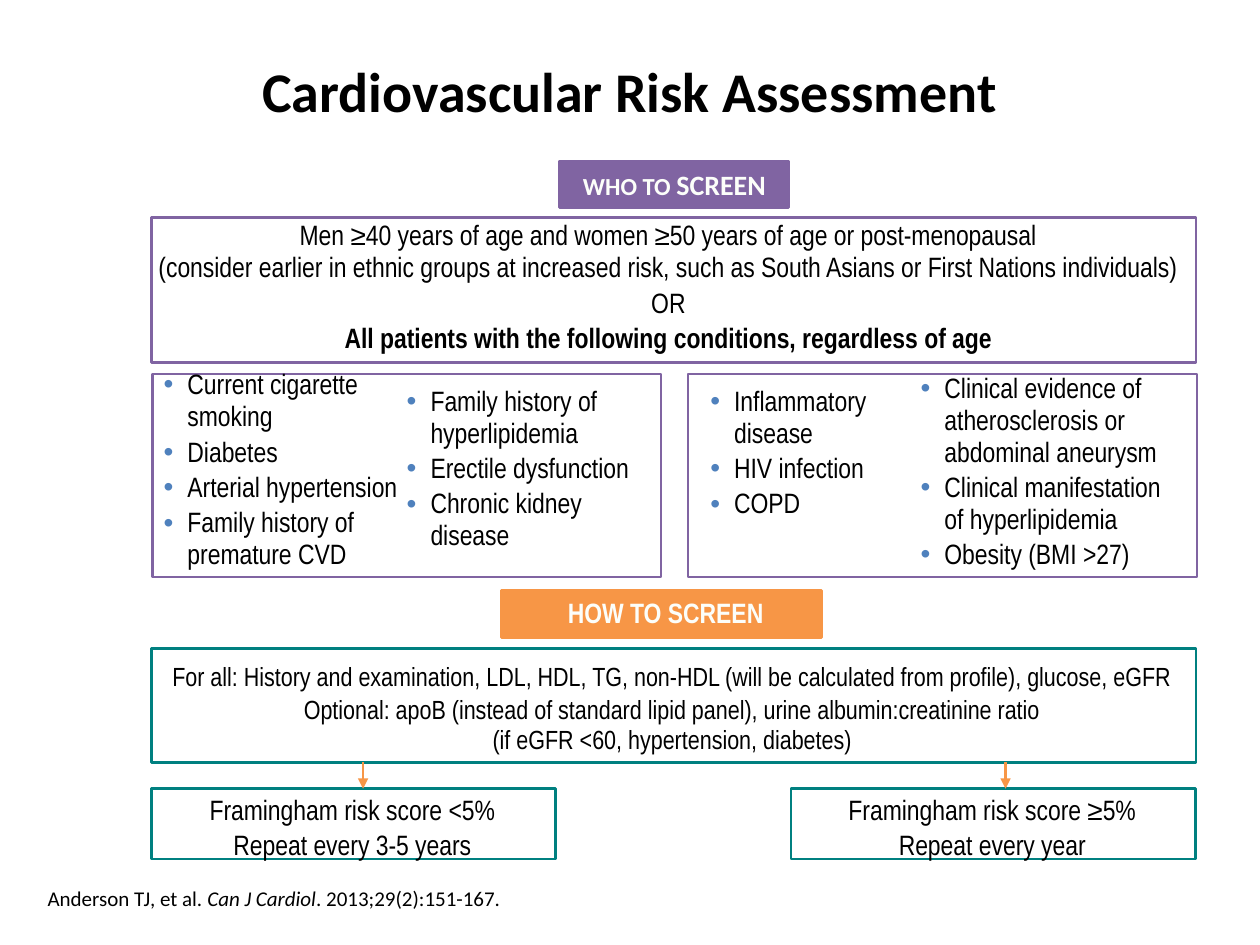
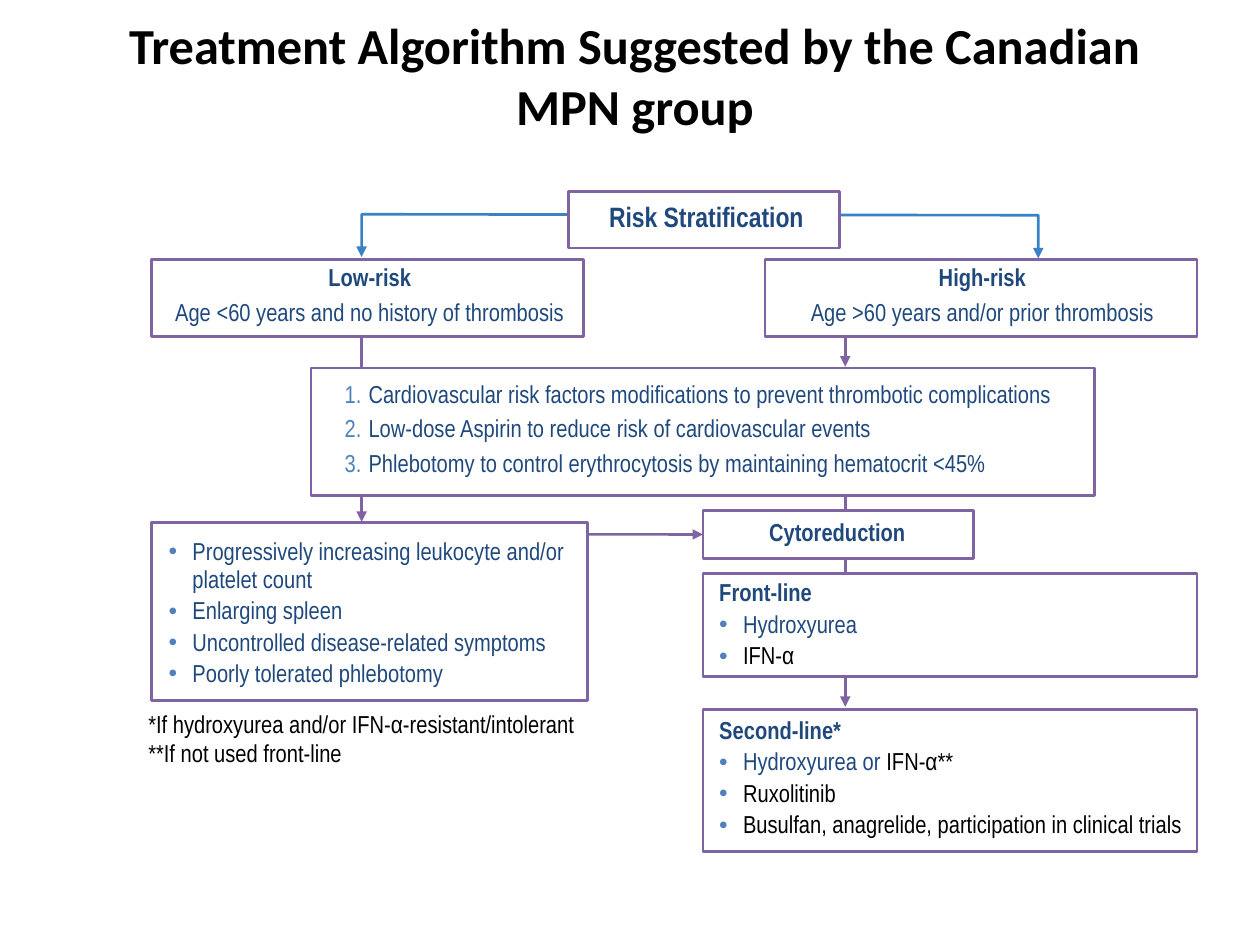
from collections import namedtuple
from dataclasses import dataclass, replace

from lxml.etree import SubElement
from pptx import Presentation
from pptx.dml.color import RGBColor
from pptx.enum.shapes import MSO_CONNECTOR as CONNECTOR, MSO_SHAPE as SHAPE
from pptx.enum.text import MSO_ANCHOR as ANCHOR, PP_ALIGN as ALIGN
from pptx.oxml.ns import qn
from pptx.util import Cm, Pt

COLORS = {
    "black": "000000", "white": "FFFFFF", "banner_text": "FCFEFA",
    "purple": "8064A2", "teal": "008080", "orange": "F79646",
    "navy": "1F497D", "bullet": "4F81BD", "blue": "3883C5",
}
LINE_WIDTH = Pt(1.5)
INDENT = Cm(0.48)


class Box(namedtuple("Box", "x y w h")):
    """A region in centimetres."""

    def inner(self, dx, dy, w, h):
        """A region placed from this one's top left corner."""
        return Box(self.x + dx, self.y + dy, w, h)

    def lengths(self):
        return [Cm(value) for value in self]


@dataclass(frozen=True)
class Style:
    size: float = 16
    color: str = "black"
    font: str = "Arial Narrow"
    bold: bool = False
    align: ALIGN = ALIGN.LEFT
    spacing: float = 0.95
    after: float = 2
    marker: str = ""


CENTERED = Style(align=ALIGN.CENTER)
BULLET = Style(marker="•")
HEADING = Style(size=14, color="navy", bold=True)
NODE = replace(HEADING, align=ALIGN.CENTER, after=4)
NAVY_BULLET = replace(HEADING, bold=False, marker="•")
BLACK_BULLET = replace(NAVY_BULLET, color="black")
PLAIN = Style(font="Calibri", size=12, spacing=1, after=0)


def rgb(name):
    return RGBColor.from_string(COLORS[name])


def add_marker(paragraph, marker):
    """Give the paragraph a hanging bullet, or automatic numbers for "1."."""
    props = paragraph._p.get_or_add_pPr()
    props.set("marL", str(INDENT))
    props.set("indent", str(-INDENT))
    tint = SubElement(props, qn("a:buClr"))
    SubElement(tint, qn("a:srgbClr"), val=COLORS["bullet"])
    if marker == "1.":
        SubElement(props, qn("a:buFont"), typeface="+mj-lt")
        SubElement(props, qn("a:buAutoNum"), type="arabicPeriod")
    else:
        SubElement(props, qn("a:buFont"), typeface="Arial")
        SubElement(props, qn("a:buChar"), char=marker)


def write_paragraph(paragraph, style, content):
    """Content is a string, or (text, font changes) pairs for mixed runs."""
    paragraph.alignment = style.align
    paragraph.line_spacing = style.spacing
    paragraph.space_after = Pt(style.after)
    if style.marker:
        add_marker(paragraph, style.marker)
    font = paragraph.font
    font.name, font.size, font.bold = style.font, Pt(style.size), style.bold
    font.color.rgb = rgb(style.color)
    if isinstance(content, str):
        paragraph.text = content
        return
    for text, changes in content:
        run = paragraph.add_run()
        run.text = text
        run.font.size = changes.get("size")
        run.font.italic = changes.get("italic")
        if "color" in changes:
            run.font.color.rgb = rgb(changes["color"])


def add_text(slide, box, *lines, wrap=True, anchor=ANCHOR.TOP):
    """Each line is a (style, content) pair."""
    frame = slide.shapes.add_textbox(*box.lengths()).text_frame
    frame.word_wrap = wrap
    frame.vertical_anchor = anchor
    for number, (style, content) in enumerate(lines):
        paragraph = frame.add_paragraph() if number else frame.paragraphs[0]
        write_paragraph(paragraph, style, content)


def styled(style, *contents):
    return [(style, content) for content in contents]


def add_panel(slide, box, outline, fill="white"):
    panel = slide.shapes.add_shape(SHAPE.RECTANGLE, *box.lengths())
    panel.shadow.inherit = False
    panel.fill.solid()
    panel.fill.fore_color.rgb = rgb(fill)
    panel.line.color.rgb = rgb(outline)
    panel.line.width = LINE_WIDTH
    return panel


def style_arrow(arrow, color, *ends):
    arrow.line.color.rgb = rgb(color)
    arrow.line.width = LINE_WIDTH
    for end in ends:
        SubElement(arrow.line._get_or_add_ln(), qn(f"a:{end}"), type="triangle")


def add_arrow(slide, color, x1, y1, x2, y2):
    arrow = slide.shapes.add_connector(
        CONNECTOR.STRAIGHT, Cm(x1), Cm(y1), Cm(x2), Cm(y2))
    style_arrow(arrow, color, "tailEnd")
    SubElement(arrow._element.spPr, qn("a:effectLst"))
    return arrow


def add_title(slide, box, text, size):
    style = replace(PLAIN, size=size, bold=True, align=ALIGN.CENTER)
    add_text(slide, box, (style, text), anchor=ANCHOR.MIDDLE)


def who_to_screen(slide, box):
    banner = box.inner(8.23, 0, 4.62, 0.94)
    add_panel(slide, banner, "purple", fill="purple")
    label = replace(CENTERED, font="Calibri", color="banner_text", bold=True, after=4)
    add_text(slide, banner.inner(0.12, 0.05, 4.39, 0.91),
             (label, [("WHO TO ", {"size": Pt(14)}), ("SCREEN", {})]))

    ages = box.inner(0, 1.14, box.w, 2.92)
    add_panel(slide, ages, "purple")
    add_text(slide, ages.inner(-0.18, -0.07, 21.21, 3),
             (CENTERED, "Men ≥40 years of age and women ≥50 years of age or post-menopausal\n"
              "(consider earlier in ethnic groups at increased risk, "
              "such as South Asians or First Nations individuals)"),
             (CENTERED, "OR"),
             (replace(CENTERED, bold=True),
              "All patients with the following conditions, regardless of age"))

    left = box.inner(0.02, 4.29, 10.26, 4.09)
    right = left.inner(10.8, 0, left.w, left.h)
    for half in (left, right):
        add_panel(slide, half, "purple")
    columns = [
        (left.inner(-0.02, -0.22, 5.59, 4.37),
         ["Current cigarette smoking", "Diabetes", "Arterial hypertension",
          "Family history of premature CVD"]),
        (left.inner(4.88, 0.11, 5, 3.66),
         ["Family history of hyperlipidemia", "Erectile dysfunction",
          "Chronic kidney disease"]),
        (right.inner(0.2, 0.11, 4.93, 3),
         ["Inflammatory disease", "HIV infection", "COPD"]),
        (right.inner(4.44, -0.15, 5.77, 4.29),
         ["Clinical evidence of atherosclerosis or abdominal aneurysm",
          "Clinical manifestation of hyperlipidemia", "Obesity (BMI >27)"]),
    ]
    for column, conditions in columns:
        add_text(slide, column, *styled(BULLET, *conditions))


def how_to_screen(slide, box):
    banner = box.inner(7.06, 0, 6.45, 0.94)
    add_panel(slide, banner, "orange", fill="orange")
    add_text(slide, banner.inner(0.86, 0.03, 4.9, 0.91),
             (replace(CENTERED, color="banner_text", bold=True), "HOW TO SCREEN"))

    tests = box.inner(0, 1.17, box.w, 2.29)
    add_panel(slide, tests, "teal")
    add_text(slide, tests.inner(0, 0.15, 21.01, 2.16), *styled(
        replace(CENTERED, size=15),
        "For all: History and examination, LDL, HDL, TG, non-HDL "
        "(will be calculated from profile), glucose, eGFR",
        "Optional: apoB (instead of standard lipid panel), urine albumin:creatinine ratio\n"
        "(if eGFR <60, hypertension, diabetes)"))

    outcomes = [(0, 4.27, "<5%", "3-5 years"), (12.9, 17.22, "≥5%", "year")]
    for dx, arrow_dx, score, interval in outcomes:
        outcome = box.inner(dx, 3.99, 8.15, 1.42)
        add_panel(slide, outcome, "teal")
        add_text(slide, outcome.inner(0.64, 0, 6.83, 1.63), *styled(
            CENTERED, f"Framingham risk score {score}", f"Repeat every {interval}"))
        x = box.x + arrow_dx
        add_arrow(slide, "orange", x, tests.y + tests.h, x, outcome.y)


def risk_assessment_slide(slide):
    add_title(slide, Box(1.27, 0.23, 22.86, 3.18), "Cardiovascular Risk Assessment", 32)
    who_to_screen(slide, Box(3.05, 3.25, 21.06, 8.38))
    how_to_screen(slide, Box(3.05, 11.91, 21.06, 5.41))
    add_text(slide, Box(0.71, 17.73, 17.96, 0.76),
             (PLAIN, [("Anderson TJ, et al. ", {}), ("Can J Cardiol", {"italic": True}),
                      (". 2013;29(2):151-167.", {})]))


def risk_split(slide, box):
    """Risk stratification, branching into the low and high risk groups."""
    outline = slide.shapes.build_freeform(Cm(box.x + 4.24), Cm(box.y + 1.32))
    corners = [(4.24, 0.46), (17.88, 0.48), (17.88, 1.35)]
    outline.add_line_segments(
        [(Cm(box.x + dx), Cm(box.y + dy)) for dx, dy in corners], close=False)
    branch = outline.convert_to_shape()
    branch.shadow.inherit = False
    branch.fill.background()
    style_arrow(branch, "blue", "headEnd", "tailEnd")

    root = box.inner(8.41, 0, 5.46, 1.14)
    add_panel(slide, root, "purple")
    add_text(slide, root.inner(0.53, 0.08, 4.5, 0.91),
             (replace(NODE, size=16), "Risk Stratification"), wrap=False)

    groups = [
        (0, 0.2, 8.41, "Low-risk", "Age <60 years and no history of thrombosis"),
        (12.37, 0.64, 7.49, "High-risk", "Age >60 years and/or prior thrombosis"),
    ]
    for dx, inset, width, name, criteria in groups:
        group = box.inner(dx, 1.37, 8.71, 1.55)
        add_panel(slide, group, "purple")
        add_text(slide, group.inner(inset, -0.03, width, 1.55),
                 (NODE, name), (replace(NODE, bold=False), criteria), wrap=False)


def shared_measures(slide, box):
    add_panel(slide, box, "purple")
    add_text(slide, box.inner(0.43, 0.13, 14.86, 2.26), *styled(
        replace(NAVY_BULLET, marker="1.", after=4),
        "Cardiovascular risk factors modifications to prevent thrombotic complications",
        "Low-dose Aspirin to reduce risk of cardiovascular events",
        "Phlebotomy to control erythrocytosis by maintaining hematocrit <45%"))


def progression_signs(slide, box):
    add_panel(slide, box, "purple")
    add_text(slide, box.inner(0.1, 0.18, 8.66, 3.33), *styled(
        NAVY_BULLET,
        "Progressively increasing leukocyte and/or platelet count",
        "Enlarging spleen",
        "Uncontrolled disease-related symptoms",
        "Poorly tolerated phlebotomy"))
    add_text(slide, box.inner(-0.31, 3.63, 10.34, 1.45), *styled(
        replace(PLAIN, font="Arial Narrow", size=14),
        "*If hydroxyurea and/or IFN-α-resistant/intolerant",
        "**If not used front-line"))


def cytoreduction(slide, box):
    """Draw the therapy column and return its heading panel."""
    heading = box.inner(0, 0, 5.46, 0.97)
    heading_panel = add_panel(slide, heading, "purple")
    add_text(slide, heading.inner(1.07, 0.05, 3.28, 0.84),
             (NODE, "Cytoreduction"), wrap=False)

    front = box.inner(0, 1.27, box.w, 2.08)
    add_panel(slide, front, "purple")
    add_text(slide, front.inner(0.08, 0, 4.24, 2.11), (HEADING, "Front-line"),
             (NAVY_BULLET, "Hydroxyurea"), (BLACK_BULLET, "IFN-α"))

    second = box.inner(0, 4.01, box.w, 2.87)
    add_panel(slide, second, "purple")
    add_text(slide, second.inner(0.08, 0.03, 10.16, 2.74), (HEADING, "Second-line*"),
             (NAVY_BULLET, [("Hydroxyurea or ", {}), ("IFN-α**", {"color": "black"})]),
             *styled(BLACK_BULLET, "Ruxolitinib",
                     "Busulfan, anagrelide, participation in clinical trials"))
    return heading_panel


def treatment_slide(slide):
    add_title(slide, Box(1.37, 0.53, 22.86, 1.96),
              "Treatment Algorithm Suggested by the Canadian MPN group", 28.8)
    low_x, high_x = 7.29, 17.04
    for x, top, bottom in [(low_x, 6.07, 10.52), (high_x, 5.61, 7.39),
                           (high_x, 9.83, 14.25)]:
        add_arrow(slide, "purple", x, top, x, bottom)
    to_cytoreduction = add_arrow(slide, "purple", 9.73, 10.77, 14.17, 10.77)
    risk_split(slide, Box(3.05, 3.86, 21.08, 2.92))
    shared_measures(slide, Box(6.27, 7.42, 15.8, 2.57))
    progression_signs(slide, Box(3.05, 10.54, 8.79, 3.58))
    heading_panel = cytoreduction(slide, Box(14.17, 10.29, 9.96, 6.88))
    to_cytoreduction.end_connect(heading_panel, 1)


def main():
    deck = Presentation()
    deck.slide_width, deck.slide_height = Cm(25.4), Cm(19.05)
    for build in (risk_assessment_slide, treatment_slide):
        build(deck.slides.add_slide(deck.slide_layouts[6]))
    deck.save("out.pptx")


if __name__ == "__main__":
    main()
